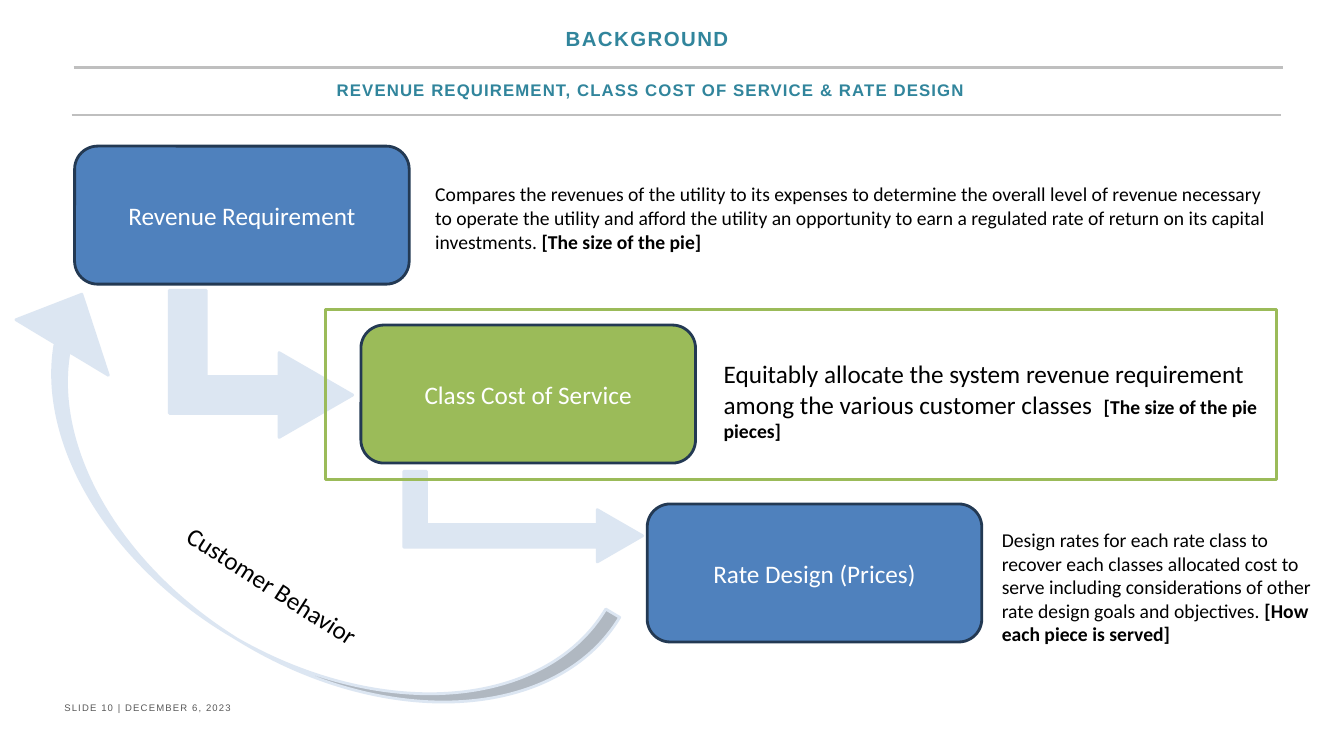
import pptx
import pptx.util
import pptx.dml.color
import pptx.enum.shapes
import pptx.enum.text
import pptx.oxml.ns
import lxml.etree

Pt = pptx.util.Pt
SHAPE = pptx.enum.shapes.MSO_SHAPE
CENTER = pptx.enum.text.PP_ALIGN.CENTER
MIDDLE = pptx.enum.text.MSO_ANCHOR.MIDDLE

# Content
COLORS = {"teal": "31859C", "gray": "595959", "rule": "BFBFBF", "blue": "4F81BD",
          "green": "9BBB59", "navy": "233953", "pale": "DCE6F2",
          "white": "FFFFFF", "black": "000000"}
SECTION = "BACKGROUND"
TITLE = "REVENUE REQUIREMENT, CLASS COST OF SERVICE & RATE DESIGN"
FOOTER = "SLIDE 10 | DECEMBER 6, 2023"
FEEDBACK = "Customer Behavior"
# Each step: label, fill, description, pie remark, description size, description box
STEPS = [
    ("Revenue Requirement", "blue",
     "Compares the revenues of the utility to its expenses to determine the overall "
     "level of revenue necessary to operate the utility and afford the utility an "
     "opportunity to earn a regulated rate of return on its capital investments. ",
     "[The size of the pie]", 14, (303.8, 126.7, 608.4, 58.3)),
    ("Class Cost of Service", "green",
     "Equitably allocate the system revenue requirement among the various customer "
     "classes  ",
     "[The size of the pie pieces]", 18, (509.8, 252.7, 396.7, 67.7)),
    ("Rate Design (Prices)", "blue",
     "Design rates for each rate class to recover each classes allocated cost to serve "
     "including considerations of other rate design goals and objectives. ",
     "[How each piece is served]", 14, (708.5, 373.7, 238.3, 92.2)),
]
REMARK_SIZE = 14

# Layout
RULES = [(51.1, 82.1), (52.6, 48.2)]
RULE_LENGTH = 864
STEP_LEFT, STEP_TOP, STEP_WIDTH, STEP_HEIGHT = 53.3, 104.4, 239, 98.6
STEP_RIGHTWARD, STEP_DOWNWARD = 204.5, 127.8
BENT_ARROWS = [(133.9, 194.4, 105.1, 131), (341.3, 283.7, 64.8, 170.6)]
HIGHLIGHT = (232.6, 221, 679, 121.7)
FEEDBACK_ARROW = (-49, 304.6, 486.7, 154.1)


def rgb(name):
    return pptx.dml.color.RGBColor.from_string(COLORS[name])


def write(shape, runs, size, color, font="Calibri", bold=False, align=None,
          anchor=None, spacing=None, wrap=True):
    frame = shape.text_frame
    frame.word_wrap = wrap
    if anchor is not None:
        frame.vertical_anchor = anchor
    paragraph = frame.paragraphs[0]
    paragraph.alignment = align
    paragraph.font.name = font
    paragraph.font.size = Pt(size)
    paragraph.font.bold = bold
    paragraph.font.color.rgb = rgb(color)
    for text in runs:
        run = paragraph.add_run()
        run.text = text
        if spacing:
            run._r.get_or_add_rPr().set("spc", str(spacing))
    return paragraph


def add_text(box, runs, size, color, **style):
    text_box = slide.shapes.add_textbox(*map(Pt, box))
    return text_box, write(text_box, runs, size, color, **style)


def add_outlined(kind, box, fill, line, adjustments=(), rotation=0):
    shape = slide.shapes.add_shape(kind, *map(Pt, box))
    shape.shadow.inherit = False
    if fill:
        shape.fill.solid()
        shape.fill.fore_color.rgb = rgb(fill)
    else:
        shape.fill.background()
    shape.line.color.rgb = rgb(line)
    shape.line.width = Pt(2)
    for index, value in enumerate(adjustments):
        shape.adjustments[index] = value
    shape.rotation = rotation
    return shape


presentation = pptx.Presentation()
presentation.slide_width, presentation.slide_height = Pt(960), Pt(540)
slide = presentation.slides.add_slide(presentation.slide_layouts[5])

# Header and footer
for left, top in RULES:
    rule = slide.shapes.add_connector(pptx.enum.shapes.MSO_CONNECTOR.STRAIGHT,
                                      Pt(left), Pt(top), Pt(left + RULE_LENGTH), Pt(top))
    rule.line.color.rgb = rgb("rule")
    rule.line.width = Pt(1.5)
    lxml.etree.SubElement(rule._element.spPr, pptx.oxml.ns.qn("a:effectLst"))

title = slide.shapes.title
title.left, title.top, title.width, title.height = map(Pt, (81.4, 51.8, 766.8, 25.2))
title.text_frame.auto_size = pptx.enum.text.MSO_AUTO_SIZE.NONE
heading = dict(font="Arial", bold=True, align=CENTER, anchor=MIDDLE)
write(title, [TITLE], 12, "teal", spacing=80, **heading)
add_text((194.4, 10.8, 535.7, 33.8), [SECTION], 14.6, "teal", spacing=100, **heading)
add_text((38.9, 498.2, 257, 15.1), [FOOTER], 6.8, "gray", font="Arial", spacing=80)

# Steps, stacked as a staircase
for index, (label, fill, *_) in enumerate(STEPS):
    step_box = (STEP_LEFT + index * STEP_RIGHTWARD, STEP_TOP + index * STEP_DOWNWARD,
                STEP_WIDTH, STEP_HEIGHT)
    step = add_outlined(SHAPE.ROUNDED_RECTANGLE, step_box, fill, "navy")
    write(step, [label], 18, "white", align=CENTER, anchor=MIDDLE)

# Arrows from each step to the next
for arrow_box in BENT_ARROWS:
    add_outlined(SHAPE.BENT_UP_ARROW, arrow_box, "pale", "pale", (0.25, 0.288, 0.5), 90)

# Descriptions with the pie remark in bold
for _, _, description, remark, size, description_box in STEPS:
    _, paragraph = add_text(description_box, [description, remark], size, "black")
    remark_font = paragraph.runs[1].font
    remark_font.bold = True
    remark_font.size = Pt(REMARK_SIZE)

# Highlight around the middle step, and the feedback loop
add_outlined(SHAPE.RECTANGLE, HIGHLIGHT, None, "green")
add_outlined(SHAPE.CURVED_DOWN_ARROW, FEEDBACK_ARROW, "pale", "pale",
             (0.075, 0.5, 0.259), 211)
feedback, _ = add_text((117.4, 404.6, 156.2, 28.8), [FEEDBACK], 18, "black", wrap=False)
feedback.rotation = 32.7

presentation.save("out.pptx")
